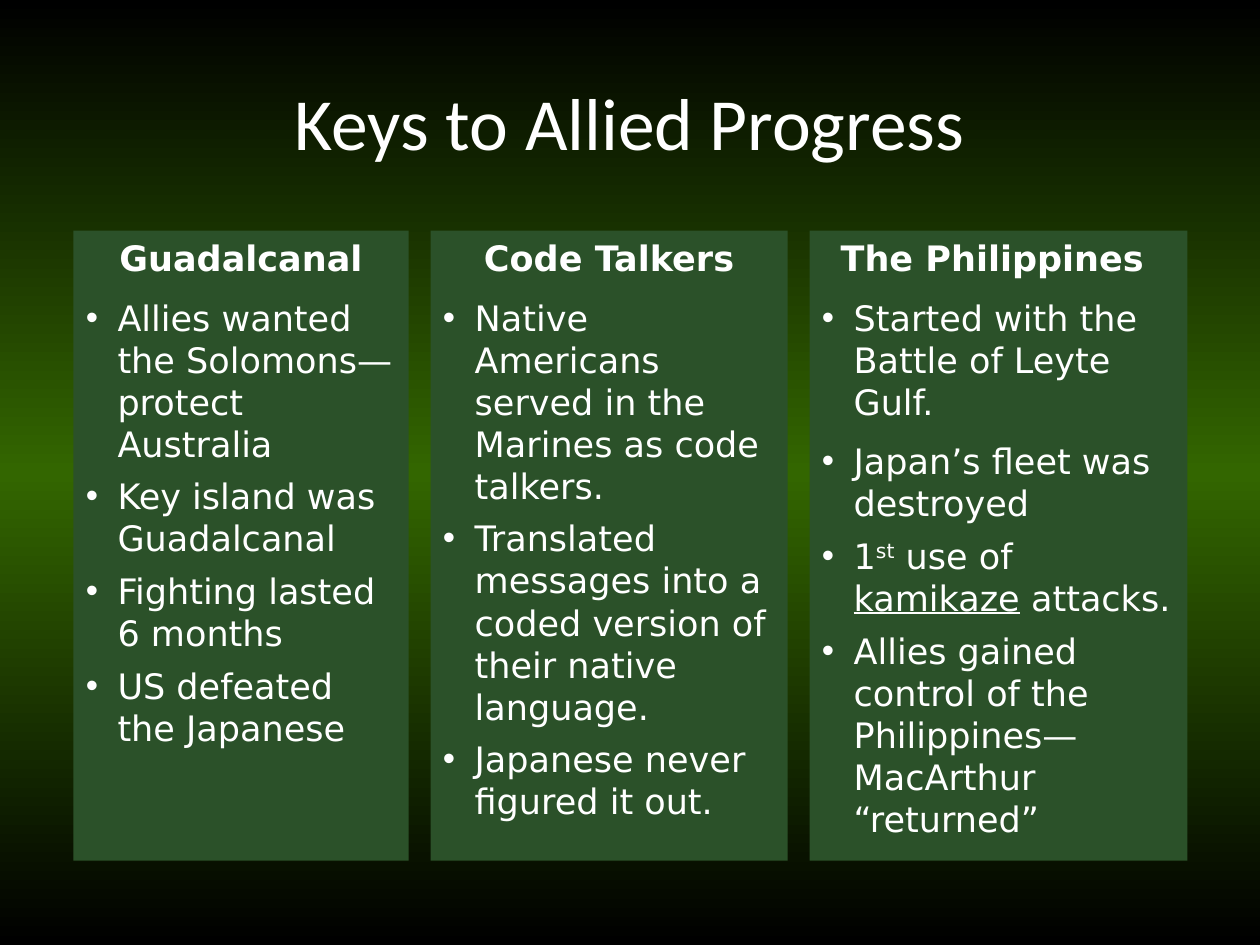
from copy import deepcopy
from dataclasses import dataclass

from lxml.etree import SubElement
from pptx import Presentation
from pptx.dml.color import RGBColor
from pptx.enum.shapes import MSO_SHAPE
from pptx.enum.text import MSO_ANCHOR, PP_ALIGN
from pptx.oxml.ns import qn
from pptx.util import Cm, Pt

TITLE = "Keys to Allied Progress"

# Each column: heading, width in cm, bullets as (space before in points, runs).
# A run is (text, style), where style is None, "superscript" or "underline".
WIDE, NARROW = 10, 6
COLUMNS = [
    ("Guadalcanal", 6.76, [
        (WIDE, [("Allies wanted the Solomons—protect Australia", None)]),
        (NARROW, [("Key island was Guadalcanal", None)]),
        (NARROW, [("Fighting lasted 6 months", None)]),
        (NARROW, [("US defeated the Japanese", None)]),
    ]),
    ("Code Talkers", 7.2, [
        (WIDE, [("Native Americans served in the Marines as code talkers.", None)]),
        (NARROW, [("Translated messages into a coded version of their native language.", None)]),
        (NARROW, [("Japanese never figured it out.", None)]),
    ]),
    ("The Philippines ", 7.62, [
        (WIDE, [("Started with the Battle of Leyte Gulf.", None)]),
        (WIDE, [("Japan’s fleet was destroyed", None)]),
        (NARROW, [("1", None), ("st", "superscript"), (" use of ", None),
                  ("kamikaze", "underline"), (" attacks.", None)]),
        (NARROW, [("Allies gained control of the Philippines—MacArthur “returned”", None)]),
    ]),
]

LEFT, TOP, HEIGHT, GAP = 1.48, 4.65, 12.7, 0.44
HANGING = Cm(0.64)


@dataclass(frozen=True)
class Theme:
    text: RGBColor = RGBColor(0xFF, 0xFF, 0xFF)
    panel: RGBColor = RGBColor(0x2B, 0x51, 0x29)
    edge: RGBColor = RGBColor(0x00, 0x00, 0x00)
    glow: RGBColor = RGBColor(0x33, 0x66, 0x00)
    title_font: str = "Calibri"
    body_font: str = "DejaVu Sans"
    title_size: Pt = Pt(42)
    body_size: Pt = Pt(20)


THEME = Theme()


def paint_background(slide):
    """Vertical gradient: dark edges with a green glow halfway down."""
    fill = slide.background.fill
    fill.gradient()
    fill.gradient_angle = 90
    first_stop = slide.element.find(".//" + qn("a:gs"))
    first_stop.addnext(deepcopy(first_stop))
    colours = (THEME.edge, THEME.glow, THEME.edge)
    for index, (stop, colour) in enumerate(zip(fill.gradient_stops, colours)):
        stop.position = index / 2
        stop.color.rgb = colour


def add_run(paragraph, text, font_name, size, bold=False, style=None):
    run = paragraph.add_run()
    run.text = text
    font = run.font
    font.name, font.size, font.bold = font_name, size, bold
    font.color.rgb = THEME.text
    if style == "underline":
        font.underline = True
    elif style == "superscript":
        run._r.get_or_add_rPr().set("baseline", "30000")


def hang(paragraph, bullet=None):
    """Give a paragraph its hanging indent and, if wanted, a bullet."""
    properties = paragraph._p.get_or_add_pPr()
    properties.set("marL", str(HANGING))
    properties.set("indent", str(-HANGING))
    if bullet:
        SubElement(properties, qn("a:buFont")).set("typeface", "Arial")
        SubElement(properties, qn("a:buChar")).set("char", bullet)


def add_title(slide):
    frame = slide.shapes.add_textbox(Cm(LEFT), Cm(1.7), Cm(22.43), Cm(1.48)).text_frame
    frame.word_wrap = True
    frame.vertical_anchor = MSO_ANCHOR.MIDDLE
    paragraph = frame.paragraphs[0]
    paragraph.alignment = PP_ALIGN.CENTER
    add_run(paragraph, TITLE, THEME.title_font, THEME.title_size)


def add_column(slide, left, width, heading, bullets):
    panel = slide.shapes.add_shape(
        MSO_SHAPE.RECTANGLE, Cm(left), Cm(TOP), Cm(width), Cm(HEIGHT))
    panel.shadow.inherit = False
    panel.fill.solid()
    panel.fill.fore_color.rgb = THEME.panel
    panel.line.fill.background()
    frame = panel.text_frame
    frame.word_wrap = True
    frame.vertical_anchor = MSO_ANCHOR.TOP

    header = frame.paragraphs[0]
    hang(header)
    header.alignment = PP_ALIGN.CENTER
    add_run(header, heading, THEME.body_font, THEME.body_size, bold=True)
    for space, runs in bullets:
        point = frame.add_paragraph()
        hang(point, "•")
        point.alignment = PP_ALIGN.LEFT
        point.space_before = Pt(space)
        for text, style in runs:
            add_run(point, text, THEME.body_font, THEME.body_size, style=style)


def main():
    deck = Presentation()
    deck.slide_width, deck.slide_height = Cm(25.4), Cm(19.05)
    slide = deck.slides.add_slide(deck.slide_layouts[6])
    paint_background(slide)
    add_title(slide)
    left = LEFT
    for heading, width, bullets in COLUMNS:
        add_column(slide, left, width, heading, bullets)
        left += width + GAP
    deck.save("out.pptx")


if __name__ == "__main__":
    main()
